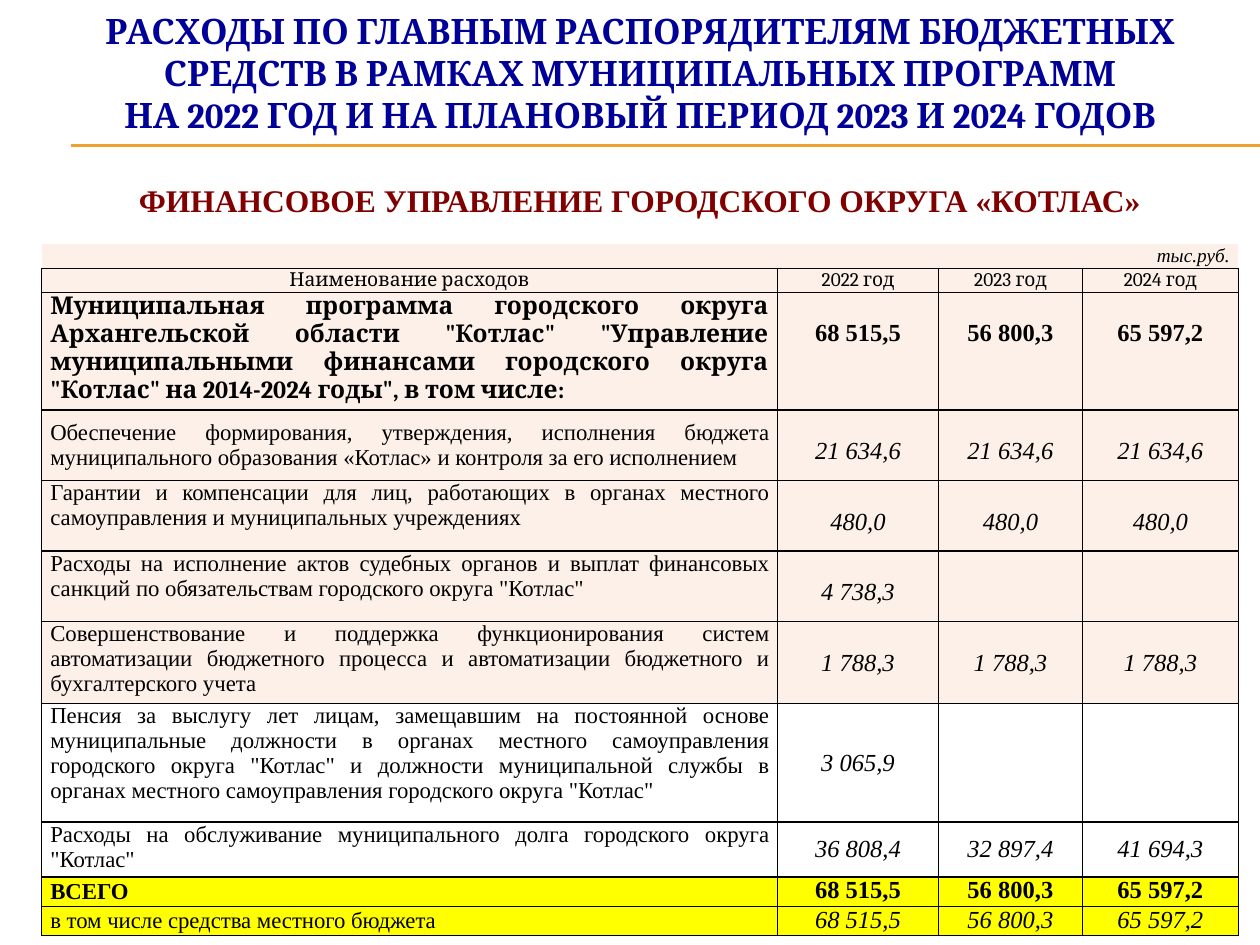
"""Build the slide on municipal programme spending by the finance department."""
from lxml.etree import SubElement
from pptx import Presentation
from pptx.dml.color import RGBColor
from pptx.enum.shapes import MSO_CONNECTOR
from pptx.enum.text import MSO_ANCHOR as VA, PP_ALIGN as AL
from pptx.oxml.ns import qn
from pptx.util import Inches, Pt

SERIF, TIMES = "Cambria", "Times New Roman"
PEACH, WHITE, YELLOW = "FCF0E8", "FFFFFF", "FFFF00"
TOP, MID = VA.TOP, VA.MIDDLE
LINE = 0.22


def rgb(value):
    return RGBColor.from_string(value)


def add_run(p, text, size, font, color="000000", bold=False, italic=False):
    r = p.add_run()
    r.text = text
    r.font.size, r.font.name = Pt(size), font
    r.font.bold, r.font.italic = bold, italic
    r.font.color.rgb = rgb(color)


prs = Presentation()
prs.slide_width, prs.slide_height = Inches(10), Inches(7.5)
s = prs.slides.add_slide(prs.slide_layouts[6])

for y in (1.15, 1.16):
    rule = s.shapes.add_connector(MSO_CONNECTOR.STRAIGHT, Inches(0.56), Inches(y), prs.slide_width, Inches(y))
    rule.line.color.rgb = rgb("F0A22E")
    rule.line.width = Pt(0.75)
    SubElement(rule._element.spPr, qn("a:effectLst"))

left, width = Inches(0.33), Inches(9.5)
tf = s.shapes.add_textbox(left, Inches(0.5), width, Inches(0.81)).text_frame
tf.word_wrap = True
tf.vertical_anchor = MID
p = tf.paragraphs[0]
p.alignment = AL.CENTER
add_run(p, "РАСХОДЫ ПО ГЛАВНЫМ РАСПОРЯДИТЕЛЯМ БЮДЖЕТНЫХ СРЕДСТВ В РАМКАХ МУНИЦИПАЛЬНЫХ ПРОГРАММ",
        20, SERIF, "000099", bold=True)
p.add_line_break()
add_run(p, "НА 2022 ГОД И НА ПЛАНОВЫЙ ПЕРИОД 2023 И 2024 ГОДОВ", 20, SERIF, "000099", bold=True)
p = tf.add_paragraph()
p.alignment = AL.CENTER
p.space_before = Pt(26)
add_run(p, "ФИНАНСОВОЕ УПРАВЛЕНИЕ ГОРОДСКОГО ОКРУГА «КОТЛАС»", 18, TIMES, "800000", bold=True)

UNIT = (11, TIMES, AL.RIGHT, MID, 0, False, True)
HEAD = (11, SERIF, AL.CENTER, MID, 0, False, False)
PROGRAM = (14, SERIF, AL.JUSTIFY, TOP, 0, True, False)
ITEM = (13, TIMES, AL.JUSTIFY, TOP, 0, False, False)
ITEM_MID = (13, TIMES, AL.JUSTIFY, MID, 0, False, False)
TOTAL = (13, TIMES, AL.LEFT, MID, 0, True, False)
LOCAL = (13, TIMES, AL.LEFT, MID, 0, False, False)
BOLD_LOW = (14, TIMES, AL.CENTER, TOP, LINE, True, False)
BOLD_TOP = (14, TIMES, AL.CENTER, TOP, 0, True, False)
VALUE_LOW = (14, TIMES, AL.CENTER, TOP, LINE, False, True)
VALUE_MID = (14, TIMES, AL.CENTER, MID, 0, False, True)
VALUE_TOP = (14, TIMES, AL.CENTER, TOP, 0, False, True)

ROWS = [
    (0.19, PEACH, UNIT, UNIT, ["", "", "", "тыс.руб."]),
    (0.19, PEACH, HEAD, HEAD, ["Наименование расходов", "2022 год", "2023 год", "2024 год"]),
    (0.75, PEACH, PROGRAM, BOLD_LOW,
     ['Муниципальная программа городского округа Архангельской области "Котлас" "Управление '
      'муниципальными финансами городского округа "Котлас" на 2014-2024 годы", в том числе:',
      "68 515,5", "56 800,3", "65 597,2"]),
    (0.56, PEACH, ITEM_MID, VALUE_LOW,
     ["Обеспечение формирования, утверждения, исполнения бюджета муниципального образования "
      "«Котлас» и контроля за его исполнением", "21 634,6", "21 634,6", "21 634,6"]),
    (0.56, PEACH, ITEM, VALUE_LOW,
     ["Гарантии и компенсации для лиц, работающих в органах местного самоуправления "
      "и муниципальных учреждениях", "480,0", "480,0", "480,0"]),
    (0.56, PEACH, ITEM, VALUE_LOW,
     ["Расходы на исполнение актов судебных органов и выплат финансовых санкций "
      'по обязательствам городского округа "Котлас"', "4 738,3", "", ""]),
    (0.56, PEACH, ITEM, VALUE_LOW,
     ["Совершенствование и поддержка функционирования систем автоматизации бюджетного процесса "
      "и автоматизации бюджетного и бухгалтерского учета", "1 788,3", "1 788,3", "1 788,3"]),
    (0.94, WHITE, ITEM, VALUE_MID,
     ["Пенсия за выслугу лет лицам, замещавшим на постоянной основе муниципальные должности "
      'в органах местного самоуправления городского округа "Котлас" и должности муниципальной '
      'службы в органах местного самоуправления городского округа "Котлас"', "3 065,9", "", ""]),
    (0.38, WHITE, ITEM, VALUE_MID,
     ['Расходы на обслуживание муниципального долга городского округа "Котлас"',
      "36 808,4", "32 897,4", "41 694,3"]),
    (0.21, YELLOW, TOTAL, BOLD_TOP, ["ВСЕГО", "68 515,5", "56 800,3", "65 597,2"]),
    (0.21, YELLOW, LOCAL, VALUE_TOP,
     ["в том числе средства местного бюджета", "68 515,5", "56 800,3", "65 597,2"]),
]

table = s.shapes.add_table(len(ROWS), 4, left, Inches(1.94), width, Inches(5.11)).table
table.first_row = table.horz_banding = False
for column, share in zip(table.columns, (5.84, 1.28, 1.14, 1.24)):
    column.width = Inches(share)

for i, (height, fill, name_style, value_style, texts) in enumerate(ROWS):
    table.rows[i].height = Inches(height)
    for j, text in enumerate(texts):
        size, font, align, anchor, top, bold, italic = value_style if j else name_style
        cell = table.cell(i, j)
        cell.margin_left = cell.margin_right = Inches(0.07)
        cell.margin_top, cell.margin_bottom = Inches(top), 0
        cell.vertical_anchor = anchor
        p = cell.text_frame.paragraphs[0]
        p.alignment = align
        if text:
            add_run(p, text, size, font, bold=bold, italic=italic)
        else:
            SubElement(p._p, qn("a:endParaRPr"), sz=str(size * 100))
        for side in "LRTB":
            ln = SubElement(cell._tc.get_or_add_tcPr(), qn("a:ln" + side), w=str(Pt(1)))
            if i == 0 and side != "B":
                SubElement(ln, qn("a:noFill"))
            else:
                SubElement(SubElement(ln, qn("a:solidFill")), qn("a:srgbClr"), val="000000")
        cell.fill.solid()
        cell.fill.fore_color.rgb = rgb(fill)

prs.save("out.pptx")
